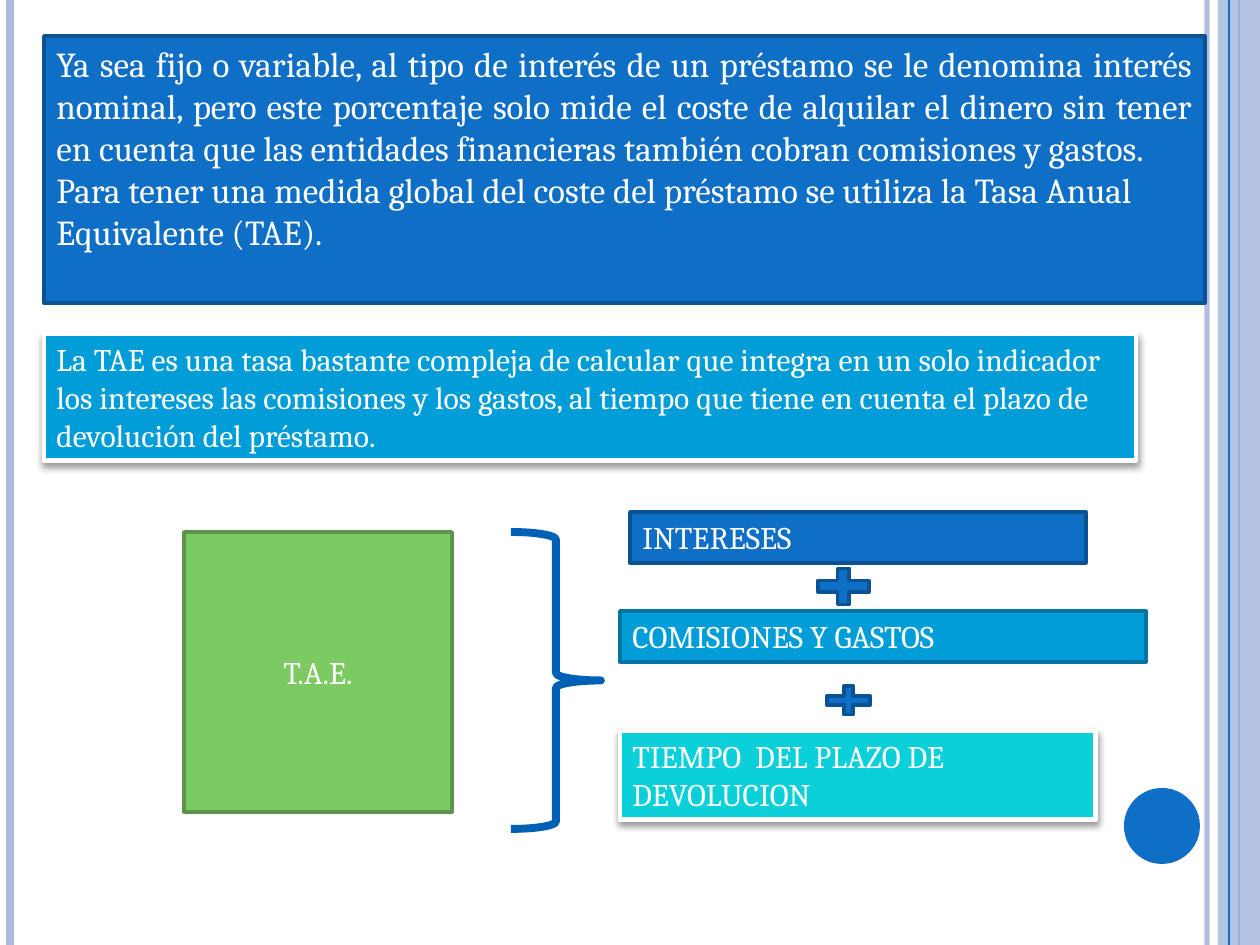
from lxml.etree import SubElement
from pptx import Presentation
from pptx.dml.color import RGBColor
from pptx.enum.shapes import MSO_CONNECTOR, MSO_SHAPE as SHAPE
from pptx.enum.text import MSO_ANCHOR as ANCHOR, PP_ALIGN as ALIGN
from pptx.oxml.ns import qn
from pptx.util import Pt

FONT = "Cambria"
COLORS = {
    "white": "FFFFFF", "lavender": "ABBBDF", "blue": "0F6FC6", "navy": "0B5292",
    "sky": "009DD9", "deep_sky": "0074A1", "turquoise": "0BD0D9",
    "green": "7CCA62", "dark_green": "5C9549", "brace": "0060B6",
}
WIDTH, HEIGHT = 1260, 945

# x, color, line width in pt, opacity in %
STRIPES_BEHIND = [(1207, "lavender", 3, 93), (10, "lavender", 4.5, 100),
                  (1239, "blue", 1.5, 100)]
STRIPE_IN_FRONT = (1229, "blue", 0.75, 100)
SIDE_BAND = (1218, 0, 42, HEIGHT)
CIRCLE = (1124, 788, 76, 76)

NOMINAL_RATE = [
    ("Ya sea fijo o variable, al tipo de interés de un préstamo se le denomina interés "
     "nominal, pero este porcentaje solo mide el coste de alquilar el dinero sin tener "
     "en cuenta que las entidades financieras también cobran comisiones y gastos.",
     ALIGN.JUSTIFY),
    ("Para tener una medida global del coste del préstamo se utiliza la Tasa Anual "
     "Equivalente (TAE).", ALIGN.LEFT),
]
TAE_MEANING = [
    ("La TAE es una tasa bastante compleja de calcular que integra en un solo indicador "
     "los intereses las comisiones y los gastos, al tiempo que tiene en cuenta el plazo "
     "de devolución del préstamo.", ALIGN.LEFT),
]
# place, fill, outline (None = white frame with shadow), paragraphs, pt, anchor
BOXES = [
    ((44, 36, 1161, 267), "blue", "navy", NOMINAL_RATE, 20, ANCHOR.TOP),
    ((44, 334, 1092, 127), "sky", None, TAE_MEANING, 18, ANCHOR.TOP),
    ((184, 532, 268, 280), "green", "dark_green",
     [("T.A.E.", ALIGN.CENTER)], 18, ANCHOR.MIDDLE),
    ((630, 512, 456, 51), "blue", "navy", [("INTERESES", ALIGN.LEFT)], 18, ANCHOR.TOP),
    ((620, 611, 526, 51), "sky", "deep_sky",
     [("COMISIONES Y GASTOS", ALIGN.LEFT)], 18, ANCHOR.TOP),
    ((620, 731, 476, 89), "turquoise", None,
     [("TIEMPO  DEL PLAZO DE DEVOLUCION", ALIGN.LEFT)], 18, ANCHOR.TOP),
]
PLUSES = [(809, 562, 69, 49), (819, 681, 59, 39)]
BRACE = (511, 532, 90, 297)


def px(length):
    return round(length * 914400 / 126)


def rgb(name):
    return RGBColor.from_string(COLORS[name])


def set_opacity(properties, percent):
    color = next(properties.iter(qn("a:srgbClr")))
    SubElement(color, qn("a:alpha"), val=str(percent * 1000))


def add_stripe(slide, x, color, width, opacity):
    stripe = slide.shapes.add_connector(
        MSO_CONNECTOR.STRAIGHT, px(x), 0, px(x), px(HEIGHT))
    stripe.line.color.rgb = rgb(color)
    stripe.line.width = Pt(width)
    properties = stripe._element.spPr
    SubElement(properties, qn("a:effectLst"))
    if opacity < 100:
        set_opacity(properties, opacity)


def add_figure(slide, kind, place, fill=None, outline=None, width=2):
    figure = slide.shapes.add_shape(kind, *map(px, place))
    figure.shadow.inherit = False
    if fill:
        figure.fill.solid()
        figure.fill.fore_color.rgb = rgb(fill)
    else:
        figure.fill.background()
    if outline:
        figure.line.color.rgb = rgb(outline)
        figure.line.width = Pt(width)
    else:
        figure.line.fill.background()
    return figure


def add_drop_shadow(figure):
    effects = figure._element.spPr.find(qn("a:effectLst"))
    shadow = SubElement(effects, qn("a:outerShdw"), blurRad=str(Pt(4)),
                        dist=str(Pt(2)), dir="5400000", rotWithShape="0")
    color = SubElement(shadow, qn("a:srgbClr"), val="000000")
    SubElement(color, qn("a:alpha"), val="40000")


def add_box(slide, place, fill, outline, paragraphs, size, anchor):
    box = add_figure(slide, SHAPE.RECTANGLE, place, fill,
                     outline or "white", 2 if outline else 2.75)
    if not outline:
        add_drop_shadow(box)
    frame = box.text_frame
    frame.word_wrap = True
    frame.vertical_anchor = anchor
    frame.text = "\n".join(text for text, _ in paragraphs)
    for paragraph, (_, alignment) in zip(frame.paragraphs, paragraphs):
        paragraph.alignment = alignment
        for run in paragraph.runs:
            run.font.name = FONT
            run.font.size = Pt(size)
            run.font.color.rgb = rgb("white")


def main():
    deck = Presentation()
    deck.slide_width, deck.slide_height = px(WIDTH), px(HEIGHT)
    slide = deck.slides.add_slide(deck.slide_layouts[6])

    for stripe in STRIPES_BEHIND:
        add_stripe(slide, *stripe)
    band = add_figure(slide, SHAPE.RECTANGLE, SIDE_BAND, "lavender")
    set_opacity(band._element.spPr, 87)
    add_stripe(slide, *STRIPE_IN_FRONT)
    add_figure(slide, SHAPE.OVAL, CIRCLE, "blue")

    for box in BOXES:
        add_box(slide, *box)
    for place in PLUSES:
        add_figure(slide, SHAPE.MATH_PLUS, place, "blue", "navy")
    add_figure(slide, SHAPE.RIGHT_BRACE, BRACE, outline="brace", width=4.5)

    deck.save("out.pptx")


if __name__ == "__main__":
    main()
